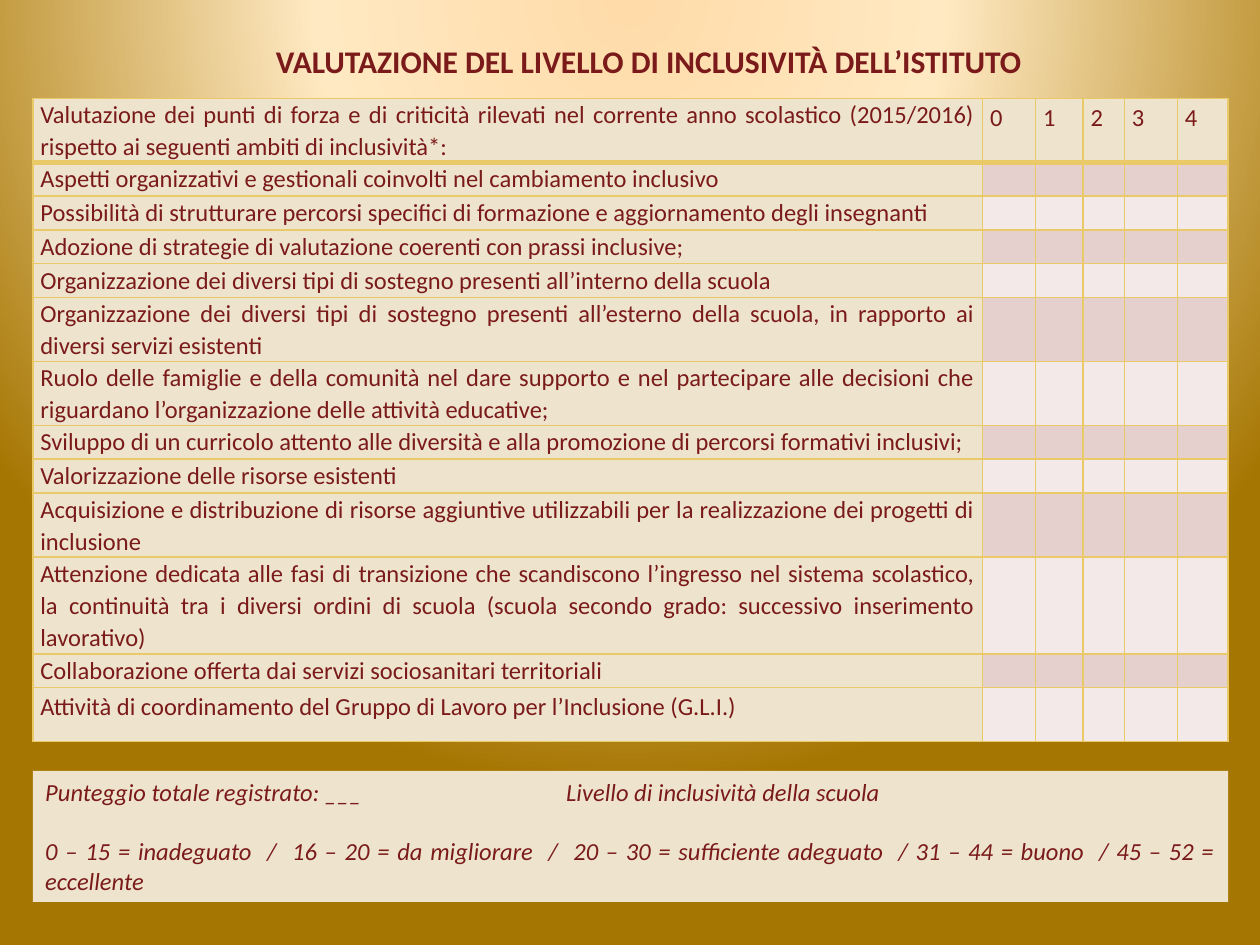
"""Build the school inclusion score slide."""
import dataclasses

import lxml.etree
import pptx
import pptx.dml.color
import pptx.enum.text
import pptx.oxml
import pptx.oxml.ns
import pptx.util

Pt = pptx.util.Pt
qn = pptx.oxml.ns.qn
Align = pptx.enum.text.PP_ALIGN
Anchor = pptx.enum.text.MSO_ANCHOR


@dataclasses.dataclass(frozen=True)
class Theme:
    """Hold the colours and type sizes of the slide."""
    font: str = "Calibri"
    ink: str = "7A1A1A"
    cream: str = "EEE4CD"
    gold: str = "EAC968"
    bands: tuple = ("F3E9E8", "E6D0CD")
    glow: tuple = ((0, "FFDBA9"), (40, "FFE9C2"), (100, "A67602"))
    head: int = 18
    body: int = 14


THEME = Theme()
LEFT, WIDTH = 18.8, 683.1
COLS = (542.7, 30.3, 27.2, 23.6, 30.3, 29)
ONE, TWO, THREE, LAST = 19.3, 36.6, 55.4, 30.9
TITLE = "VALUTAZIONE DEL LIVELLO DI INCLUSIVITÀ DELL’ISTITUTO"
MARKS = ("0", "1", "2", "3", "4")
ROWS = (
    (TWO, "Valutazione dei punti di forza e di criticità rilevati nel corrente anno scolastico (2015/2016) rispetto ai seguenti ambiti di inclusività*:"),
    (ONE, "Aspetti organizzativi e gestionali coinvolti nel cambiamento inclusivo"),
    (ONE, "Possibilità di strutturare percorsi specifici di formazione e aggiornamento degli insegnanti"),
    (ONE, "Adozione di strategie di valutazione coerenti con prassi inclusive;"),
    (ONE, "Organizzazione dei diversi tipi di sostegno presenti all’interno della scuola"),
    (TWO, "Organizzazione dei diversi tipi di sostegno presenti all’esterno della scuola, in rapporto ai diversi servizi esistenti"),
    (TWO, "Ruolo delle famiglie e della comunità nel dare supporto e nel partecipare alle decisioni che riguardano l’organizzazione delle attività educative;"),
    (ONE, "Sviluppo di un curricolo attento alle diversità e alla promozione di percorsi formativi inclusivi;"),
    (ONE, "Valorizzazione delle risorse esistenti"),
    (TWO, "Acquisizione e distribuzione di risorse aggiuntive utilizzabili per la realizzazione dei progetti di inclusione"),
    (THREE, "Attenzione dedicata alle fasi di transizione che scandiscono l’ingresso nel sistema scolastico, la continuità tra i diversi ordini di scuola (scuola secondo grado: successivo inserimento lavorativo)"),
    (ONE, "Collaborazione offerta dai servizi sociosanitari territoriali"),
    (LAST, "Attività di coordinamento del Gruppo di Lavoro per l’Inclusione (G.L.I.)"),
)
TOTAL = "Punteggio totale registrato: ___\tLivello di inclusività della scuola"
SCALE = "0 – 15 = inadeguato  /  16 – 20 = da migliorare  /  20 – 30 = sufficiente adeguato  / 31 – 44 = buono  / 45 – 52 = eccellente"


def tint(name):
    """Return a colour object for a hex name."""
    return pptx.dml.color.RGBColor.from_string(name)


def style(para, size=THEME.body, bold=False, slant=False):
    """Format each run of a paragraph."""
    for run in para.runs:
        font = run.font
        font.name, font.size = THEME.font, Pt(size)
        font.bold, font.italic = bold, slant
        font.color.rgb = tint(THEME.ink)


def paint_back(slide):
    """Give the slide its round gold glow."""
    fill = slide.background.fill
    fill.solid()
    stops = "".join(
        f'<a:gs pos="{spot * 1000}"><a:srgbClr val="{name}"/></a:gs>'
        for spot, name in THEME.glow)
    grad = pptx.oxml.parse_xml(
        f'<a:gradFill {pptx.oxml.ns.nsdecls("a")} rotWithShape="1">'
        f'<a:gsLst>{stops}</a:gsLst><a:path path="circle">'
        '<a:fillToRect l="50000" t="-80000" r="50000" b="180000"/>'
        '</a:path></a:gradFill>')
    solid = next(slide.element.iter(qn("a:solidFill")))
    solid.getparent().replace(solid, grad)


def add_title(slide):
    """Place and format the slide title."""
    title = slide.shapes.title
    title.left, title.top = Pt(75.6), Pt(17.3)
    title.width, title.height = Pt(590.4), Pt(30.2)
    frame = title.text_frame
    frame.text = TITLE
    frame.word_wrap = False
    frame.auto_size = pptx.enum.text.MSO_AUTO_SIZE.NONE
    frame.vertical_anchor = Anchor.TOP
    para = frame.paragraphs[0]
    para.alignment = Align.CENTER
    para.line_spacing = 1.15
    para.space_before, para.space_after = Pt(0), Pt(4.5)
    style(para, THEME.head, bold=True)


def edge_cell(cell, base):
    """Draw the four borders of a cell."""
    props = cell._tc.get_or_add_tcPr()
    for side, width in (("L", 1), ("R", 1), ("T", 1), ("B", base)):
        line = lxml.etree.SubElement(
            props, qn(f"a:ln{side}"), w=str(Pt(width)))
        fill = lxml.etree.SubElement(line, qn("a:solidFill"))
        lxml.etree.SubElement(fill, qn("a:srgbClr"), val=THEME.gold)


def fill_cell(cell, text, shade, base, loose):
    """Set the text, spacing, borders and fill of a cell."""
    cell.margin_left = cell.margin_right = Pt(4.3)
    cell.margin_top = cell.margin_bottom = Pt(0)
    edge_cell(cell, base)
    cell.fill.solid()
    cell.fill.fore_color.rgb = tint(shade)
    para = cell.text_frame.paragraphs[0]
    if not text:
        lxml.etree.SubElement(
            para._p, qn("a:endParaRPr"), sz=str(THEME.body * 100))
        return
    para.text = text
    para.alignment = Align.JUSTIFY
    para.line_spacing = 1.15 if loose else 1.07
    para.space_after = Pt(6 if loose else 0)
    style(para)


def add_grid(slide):
    """Add the table of areas and marks."""
    high = sum(size for size, _ in ROWS)
    table = slide.shapes.add_table(
        len(ROWS), len(COLS), Pt(LEFT), Pt(56.2), Pt(WIDTH), Pt(high)).table
    table.first_row = table.horz_banding = False
    for col, width in zip(table.columns, COLS):
        col.width = Pt(width)
    for i, (size, label) in enumerate(ROWS):
        table.rows[i].height = Pt(size)
        marks = MARKS if i == 0 else ("",) * len(MARKS)
        for j, text in enumerate((label, *marks)):
            plain = i == 0 or j == 0
            shade = THEME.cream if plain else THEME.bands[i % 2]
            fill_cell(table.cell(i, j), text, shade, 3 if i == 0 else 1,
                      j > 0 or size == LAST)


def add_key(slide):
    """Add the box with the total and the scale."""
    box = slide.shapes.add_shape(
        pptx.enum.shapes.MSO_SHAPE.RECTANGLE,
        Pt(LEFT), Pt(440.6), Pt(WIDTH), Pt(74.9))
    box.shadow.inherit = False
    box.fill.solid()
    box.fill.fore_color.rgb = tint(THEME.cream)
    box.line.fill.background()
    frame = box.text_frame
    frame.word_wrap = True
    frame.vertical_anchor = Anchor.TOP
    total, scale = frame.paragraphs[0], frame.add_paragraph()
    total.text, scale.text = TOTAL, SCALE
    total.alignment, scale.alignment = Align.LEFT, Align.JUSTIFY
    tabs = lxml.etree.SubElement(total._p.get_or_add_pPr(), qn("a:tabLst"))
    lxml.etree.SubElement(tabs, qn("a:tab"), pos=str(Pt(297.7)), algn="l")
    scale.space_before = Pt(17)
    for para in (total, scale):
        style(para, slant=True)


def main():
    """Build and save the slide."""
    deck = pptx.Presentation()
    deck.slide_width, deck.slide_height = Pt(720), Pt(540)
    slide = deck.slides.add_slide(deck.slide_layouts.get_by_name("Title Only"))
    paint_back(slide)
    add_grid(slide)
    add_key(slide)
    add_title(slide)
    deck.save("out.pptx")


if __name__ == "__main__":
    main()
